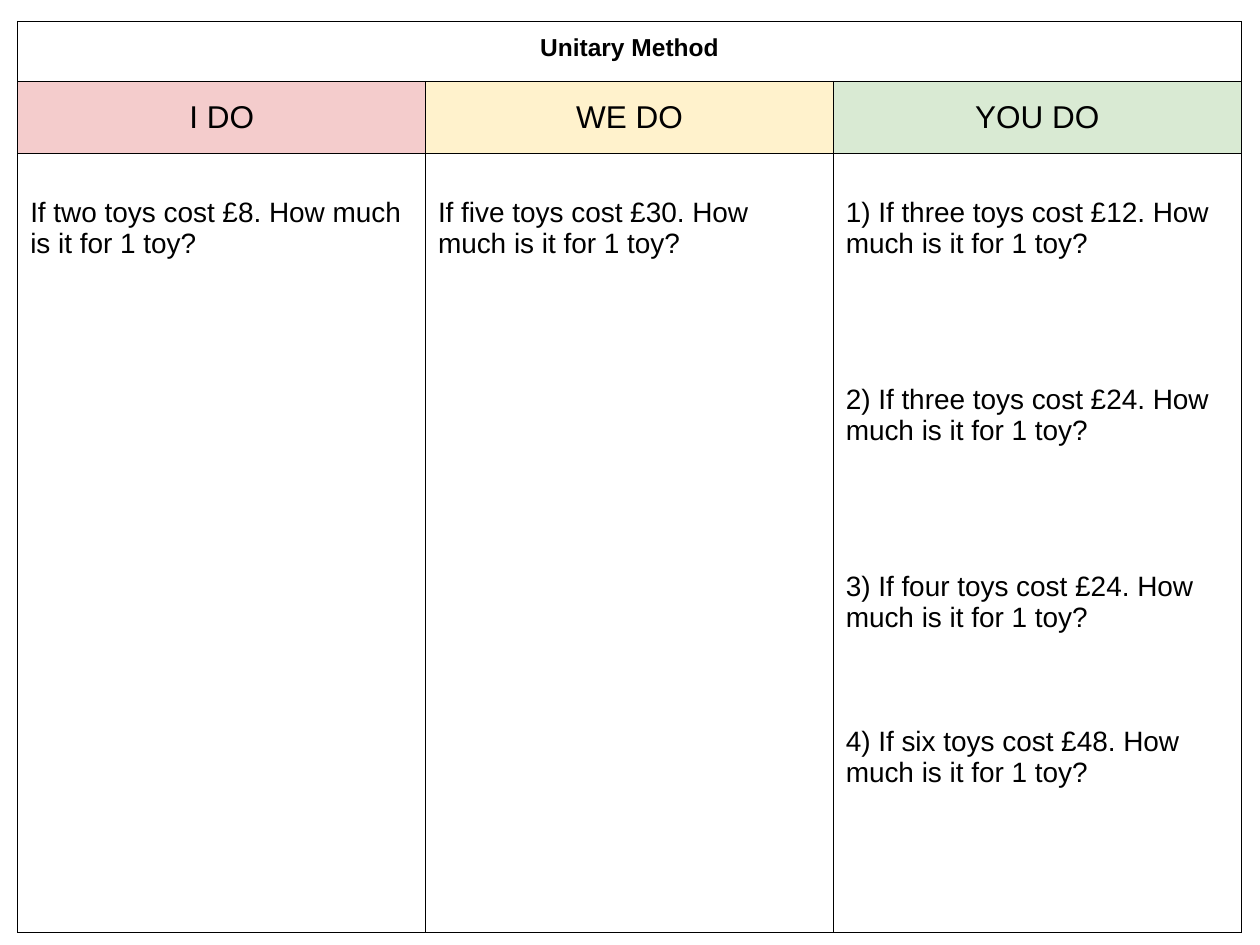
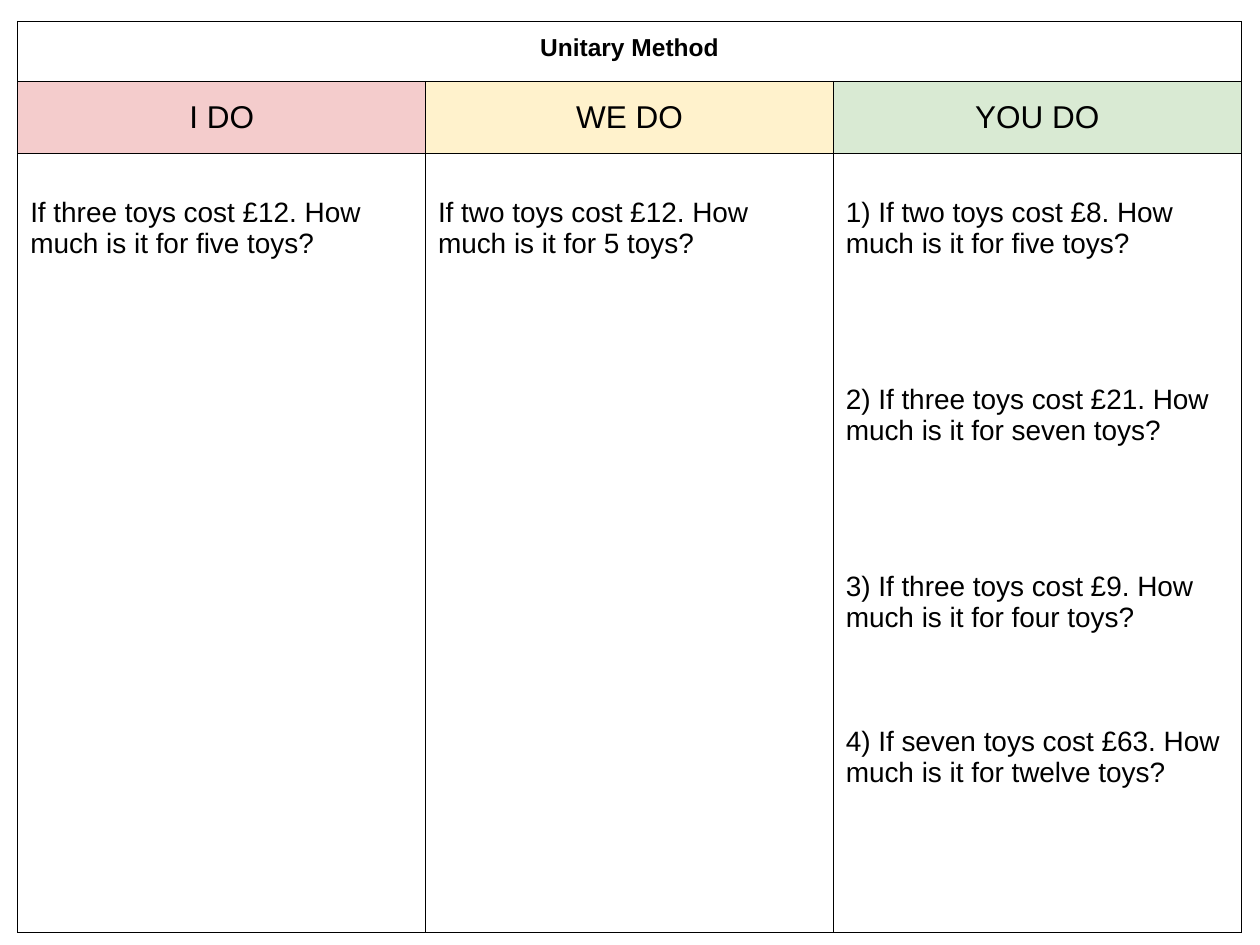
from lxml.etree import SubElement
from pptx import Presentation
from pptx.dml.color import RGBColor
from pptx.enum.text import MSO_ANCHOR as Anchor, PP_ALIGN as Align
from pptx.oxml.ns import qn
from pptx.util import Cm, Pt

COLOURS = {"ink": "000000", "I DO": "F4CCCC", "WE DO": "FFF2CC", "YOU DO": "D9EAD3"}
STAGES = ("I DO", "WE DO", "YOU DO")
FONT = "Arial"
LESSON_BOX = (Cm(0.36), Cm(0.43), Cm(24.66), Cm(18.37))
ROW_HEIGHTS = (Cm(1.21), Cm(1.46), Cm(15.7))
CELL_MARGIN = Cm(0.25)
BLANK_LINE = 17.8
GAPS_IN_LINES = (0, 4, 4, 3)

LESSONS = (
    (
        ["If two toys cost £8. How much is it for 1 toy?"],
        ["If five toys cost £30. How much is it for 1 toy?"],
        [
            "1) If three toys cost £12. How much is it for 1 toy?",
            "2) If three toys cost £24. How much is it for 1 toy?",
            "3) If four toys cost £24. How much is it for 1 toy?",
            "4) If six toys cost £48. How much is it for 1 toy?",
        ],
    ),
    (
        ["If three toys cost £12. How much is it for five toys?"],
        ["If two toys cost £12. How much is it for 5 toys?"],
        [
            "1) If two toys cost £8. How much is it for five toys?",
            "2) If three toys cost £21. How much is it for seven toys?",
            "3) If three toys cost £9. How much is it for four toys?",
            "4) If seven toys cost £63. How much is it for twelve toys?",
        ],
    ),
)


def style_cell(cell, fill=None):
    """Give a cell its margins, thin black borders and fill."""
    cell.margin_left = cell.margin_right = CELL_MARGIN
    cell.margin_top = cell.margin_bottom = CELL_MARGIN
    properties = cell._tc.get_or_add_tcPr()
    for side in ("a:lnL", "a:lnR", "a:lnT", "a:lnB"):
        border = SubElement(properties, qn(side), w=str(Pt(0.75)))
        ink = SubElement(border, qn("a:solidFill"))
        SubElement(ink, qn("a:srgbClr"), val=COLOURS["ink"])
    if fill:
        cell.fill.solid()
        cell.fill.fore_color.rgb = RGBColor.from_string(fill)
    else:
        cell.fill.background()


def write(paragraph, text, size, bold=False, align=Align.LEFT):
    """Fill a paragraph with text in the lesson font."""
    paragraph.text = text
    paragraph.alignment = align
    font = paragraph.font
    font.name, font.size, font.bold = FONT, Pt(size), bold
    font.color.rgb = RGBColor.from_string(COLOURS["ink"])


def fill_questions(cell, questions):
    """List questions below one free line, with working space between them."""
    cell.margin_top = CELL_MARGIN + Pt(BLANK_LINE)
    frame = cell.text_frame
    for number, (question, gap) in enumerate(zip(questions, GAPS_IN_LINES)):
        paragraph = frame.add_paragraph() if number else frame.paragraphs[0]
        write(paragraph, question, 16)
        if gap:
            paragraph.space_before = Pt(gap * BLANK_LINE)


def add_lesson_table(slide, box, lesson):
    """Draw the heading, the three stages and their questions in a box."""
    table = slide.shapes.add_table(len(ROW_HEIGHTS), len(STAGES), *box).table
    table.first_row = table.horz_banding = False
    for row, height in zip(table.rows, ROW_HEIGHTS):
        row.height = height

    heading = table.cell(0, 0)
    heading.merge(table.cell(0, len(STAGES) - 1))
    write(heading.text_frame.paragraphs[0], "Unitary Method", 14, True, Align.CENTER)

    for column, (stage, questions) in enumerate(zip(STAGES, lesson)):
        heading_part, stage_cell, question_cell = (
            table.cell(row, column) for row in range(len(ROW_HEIGHTS))
        )
        style_cell(heading_part)
        style_cell(stage_cell, COLOURS[stage])
        stage_cell.vertical_anchor = Anchor.MIDDLE
        write(stage_cell.text_frame.paragraphs[0], stage, 18, align=Align.CENTER)
        style_cell(question_cell)
        fill_questions(question_cell, questions)


def main():
    """Build one slide per lesson and save the deck."""
    deck = Presentation()
    deck.slide_width, deck.slide_height = Cm(25.4), Cm(19.05)
    blank_layout = deck.slide_layouts[6]
    for lesson in LESSONS:
        add_lesson_table(deck.slides.add_slide(blank_layout), LESSON_BOX, lesson)
    deck.save("out.pptx")


if __name__ == "__main__":
    main()
